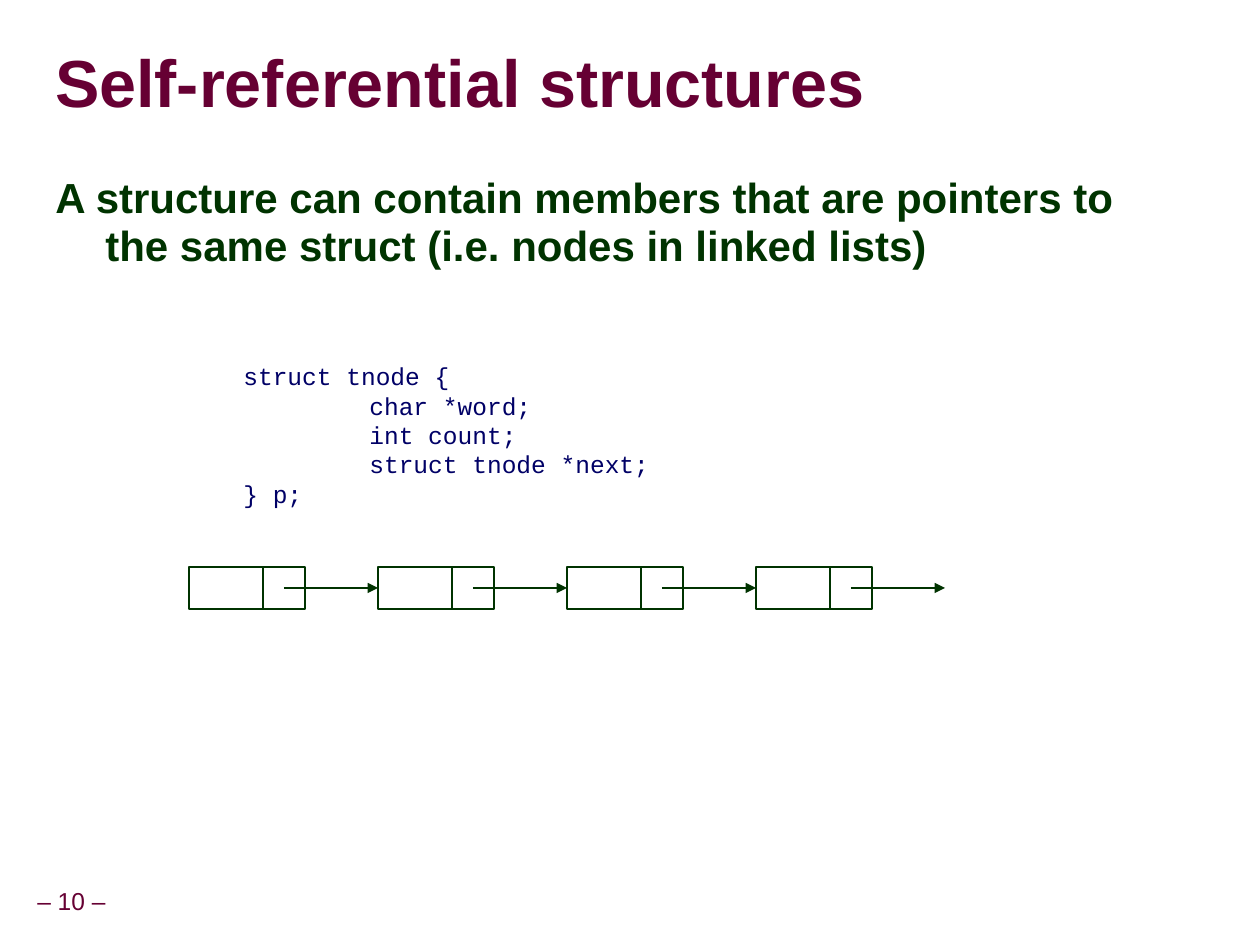
from dataclasses import dataclass

from lxml.etree import SubElement as Sub
from pptx import Presentation
from pptx.dml.color import RGBColor as RGB
from pptx.enum.shapes import MSO_CONNECTOR as Conn, MSO_SHAPE as Shape
from pptx.enum.text import MSO_ANCHOR as Anchor, MSO_AUTO_SIZE as Fit, PP_ALIGN as Align
from pptx.oxml.ns import qn
from pptx.util import Pt


@dataclass
class Theme:
    wine: RGB = RGB(0x66, 0x00, 0x33)
    green: RGB = RGB(0x00, 0x33, 0x00)
    navy: RGB = RGB(0x00, 0x00, 0x66)
    sans: str = "Arial"
    mono: str = "Courier New"
    head: int = 38
    body: int = 24
    small: int = 14
    line: float = 1.5


def px(n):
    return round(n * 914400 / 126)


def put(para, text, face, size, hue, bold=False):
    run = para.add_run()
    run.text = text
    font = run.font
    font.name, font.size, font.bold = face, Pt(size), bold
    font.color.rgb = hue


look = Theme()
deck = Presentation()
deck.slide_width, deck.slide_height = px(1260), px(945)
slide = deck.slides.add_slide(deck.slide_layouts[5])
shapes = slide.shapes

title = shapes.title
title.left, title.top, title.width, title.height = px(55), px(34), px(1198), px(105)
frame = title.text_frame
frame.auto_size = Fit.NONE
frame.word_wrap = True
frame.vertical_anchor = Anchor.MIDDLE
frame.margin_left = frame.margin_right = frame.margin_top = frame.margin_bottom = 0
para = frame.paragraphs[0]
para.alignment = Align.LEFT
para.line_spacing = 0.87
put(para, "Self-referential structures", look.sans, look.head, look.wine, True)

frame = shapes.add_textbox(px(40), px(169), px(1142), px(717)).text_frame
frame.word_wrap = True
para = frame.paragraphs[0]
para.line_spacing = 0.95
para.space_before = Pt(15)
props = para._p.get_or_add_pPr()
props.set("marL", str(px(53)))
props.set("indent", str(px(-50)))
put(
    para,
    "A structure can contain members that are pointers to the same struct (i.e. nodes in linked lists)",
    look.sans, look.body, look.green, True,
)

code = [
    ("struct tnode {", 0),
    ("char *word;", 126),
    ("int count;", 126),
    ("struct tnode *next;", 126),
    ("} p;", 0),
]
frame = shapes.add_textbox(px(231), px(355), px(945), px(160)).text_frame
frame.word_wrap = True
for row, (text, inset) in enumerate(code):
    para = frame.add_paragraph() if row else frame.paragraphs[0]
    para._p.get_or_add_pPr().set("marL", str(px(inset)))
    put(para, text, look.mono, look.small, look.navy)

count, left, top, step = 4, 189, 567, 189
data, link = 74, 42
mid = top + link // 2
arrow = None
for node in range(count):
    x = left + node * step
    for start, width in ((x, data), (x + data, link)):
        cell = shapes.add_shape(Shape.RECTANGLE, px(start), px(top), px(width), px(link))
        cell.shadow.inherit = False
        cell.fill.background()
        cell.line.color.rgb = look.green
        cell.line.width = Pt(look.line)
        if arrow and start == x:
            arrow.end_connect(cell, 1)
    arrow = shapes.add_connector(
        Conn.STRAIGHT, px(x + data + link // 2), px(mid), px(x + step), px(mid)
    )
    arrow.line.color.rgb = look.green
    arrow.line.width = Pt(look.line)
    Sub(arrow.line._get_or_add_ln(), qn("a:tailEnd"), type="triangle")
    Sub(arrow._element.spPr, qn("a:effectLst"))

frame = shapes.add_textbox(px(-11), px(881), px(165), px(43)).text_frame
frame.word_wrap = False
frame.vertical_anchor = Anchor.MIDDLE
frame.margin_left = frame.margin_right = px(6)
para = frame.paragraphs[0]
para.alignment = Align.CENTER
para.line_spacing = 0.9
put(para, "– 10 –", look.sans, look.small, look.wine)

deck.save("out.pptx")
